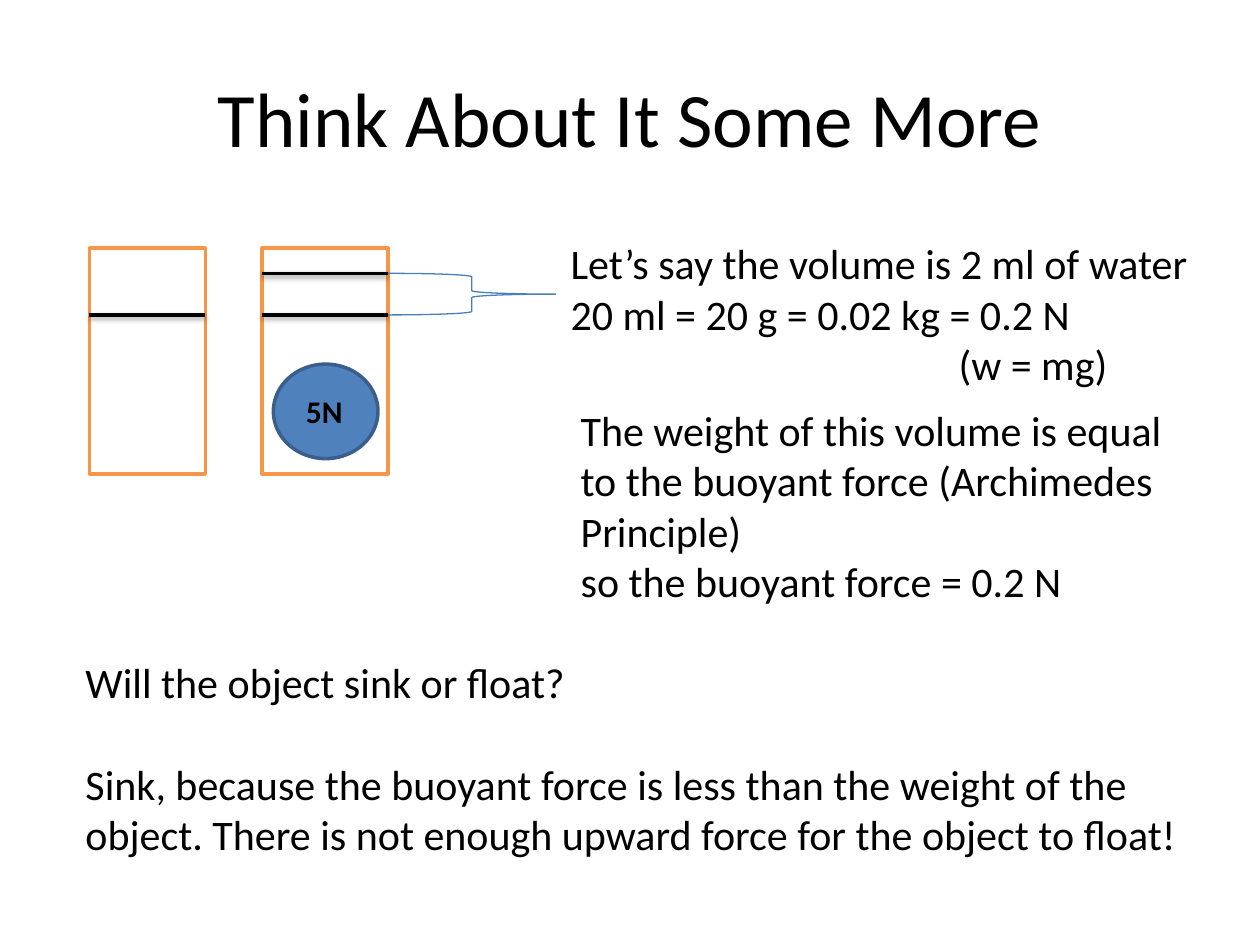
from dataclasses import dataclass

from lxml.etree import SubElement
from pptx import Presentation
from pptx.dml.color import RGBColor
from pptx.enum.shapes import MSO_CONNECTOR, MSO_SHAPE
from pptx.enum.text import MSO_ANCHOR, PP_ALIGN
from pptx.oxml.ns import qn
from pptx.util import Inches, Pt

WIDTH, HEIGHT = Inches(10), Inches(7.5)
FONT = "Calibri"
COLORS = {
    "text": "000000", "water": "000000", "glass": "FFFFFF", "rim": "F79646",
    "ball": "4F81BD", "ball_edge": "3A5F8C", "brace": "4B7EBC",
}


@dataclass(frozen=True)
class Area:
    """A rectangle in percent of the slide's width and height."""
    left: float
    top: float
    width: float
    height: float

    def emu(self) -> tuple[int, int, int, int]:
        return (across(self.left), down(self.top),
                across(self.width), down(self.height))


@dataclass(frozen=True)
class Line:
    """One paragraph: its words, gap above in points and indent in inches."""
    words: str
    gap: float = 0
    indent: float = 0


@dataclass(frozen=True)
class Note:
    area: Area
    lines: tuple[Line, ...]
    size: int = 24
    bold: bool = False


@dataclass(frozen=True)
class Beaker:
    area: Area
    levels: tuple[float, ...]


def across(percent: float) -> int:
    return round(WIDTH * percent / 100)


def down(percent: float) -> int:
    return round(HEIGHT * percent / 100)


def color(name: str) -> RGBColor:
    return RGBColor.from_string(COLORS[name])


def add_run(paragraph, words: str, size: int, bold: bool = False) -> None:
    run = paragraph.add_run()
    run.text = words
    run.font.name, run.font.size, run.font.bold = FONT, Pt(size), bold
    run.font.color.rgb = color("text")


def draw_shape(slide, preset: MSO_SHAPE, area: Area, edge: str,
               weight: float, fill: str | None = None) -> None:
    shape = slide.shapes.add_shape(preset, *area.emu())
    shape.shadow.inherit = False
    shape.line.color.rgb, shape.line.width = color(edge), Pt(weight)
    if fill:
        shape.fill.solid()
        shape.fill.fore_color.rgb = color(fill)
    else:
        shape.fill.background()


def draw_level(slide, area: Area, level: float) -> None:
    left, right, y = across(area.left), across(area.left + area.width), down(level)
    water = slide.shapes.add_connector(MSO_CONNECTOR.STRAIGHT, left, y, right, y)
    water.line.color.rgb, water.line.width = color("water"), Pt(2)
    # Soft shadow straight below the water line
    effects = SubElement(water._element.spPr, qn("a:effectLst"))
    shadow = SubElement(effects, qn("a:outerShdw"), blurRad=str(Pt(3.1)),
                        dist=str(Pt(1.6)), dir="5400000", rotWithShape="0")
    tint = SubElement(shadow, qn("a:srgbClr"), val=COLORS["water"])
    SubElement(tint, qn("a:alpha"), val="38000")


def draw_beaker(slide, beaker: Beaker) -> None:
    draw_shape(slide, MSO_SHAPE.RECTANGLE, beaker.area, "rim", 2, "glass")
    for level in beaker.levels:
        draw_level(slide, beaker.area, level)


def draw_note(slide, note: Note) -> None:
    frame = slide.shapes.add_textbox(*note.area.emu()).text_frame
    frame.word_wrap = True
    for index, line in enumerate(note.lines):
        paragraph = frame.add_paragraph() if index else frame.paragraphs[0]
        paragraph.space_before = Pt(line.gap)
        if line.indent:
            paragraph._p.get_or_add_pPr().set("marL", str(Inches(line.indent)))
        add_run(paragraph, line.words, note.size, note.bold)


# Water levels and the two beakers, before and after the ball goes in
START, RAISED = 33.33, 28.93
BEAKERS = (
    Beaker(Area(7.1, 26.27, 9.2, 23.87), (START,)),
    Beaker(Area(20.8, 26.27, 10, 23.87), (START, RAISED)),
)
BALL = Area(21.7, 38.53, 8.3, 10)
DISPLACED = Area(30.8, RAISED, 13.3, START - RAISED)

NOTES = (
    Note(Area(45.1, 42.13, 51.6, 22.93), (
        Line("The weight of this volume is equal to the buoyant force "
             "(Archimedes Principle)"),
        Line("so the buoyant force = 0.2 N"))),
    Note(Area(23.3, 40.8, 5.8, 5.33), (Line("5N"),), 18, True),
    Note(Area(44.3, 24.53, 53.2, 17.47), (
        Line("Let’s say the volume is 2 ml of water"),
        Line("20 ml = 20 g = 0.02 kg = 0.2 N"),
        Line("(w = mg)", indent=3.08))),
    Note(Area(5.8, 68.8, 90.8, 22.93), (
        Line("Will the object sink or float?"),
        Line("Sink, because the buoyant force is less than the weight of the "
             "object. There is not enough upward force for the object to float!",
             gap=29.3))),
)


def main() -> None:
    deck = Presentation()
    deck.slide_width, deck.slide_height = WIDTH, HEIGHT
    slide = deck.slides.add_slide(deck.slide_layouts[5])

    # Title
    title = slide.shapes.title
    title.left, title.top, title.width, title.height = Area(5, 4, 90, 16.67).emu()
    title.text_frame.vertical_anchor = MSO_ANCHOR.MIDDLE
    heading = title.text_frame.paragraphs[0]
    heading.alignment = PP_ALIGN.CENTER
    add_run(heading, "Think About It Some More", 44)

    # Beakers, sunken ball and the brace over the displaced water
    for beaker in BEAKERS:
        draw_beaker(slide, beaker)
    draw_shape(slide, MSO_SHAPE.OVAL, BALL, "ball_edge", 2, "ball")
    draw_shape(slide, MSO_SHAPE.RIGHT_BRACE, DISPLACED, "brace", 0.75)

    # Explanations
    for note in NOTES:
        draw_note(slide, note)

    deck.save("out.pptx")


if __name__ == "__main__":
    main()
